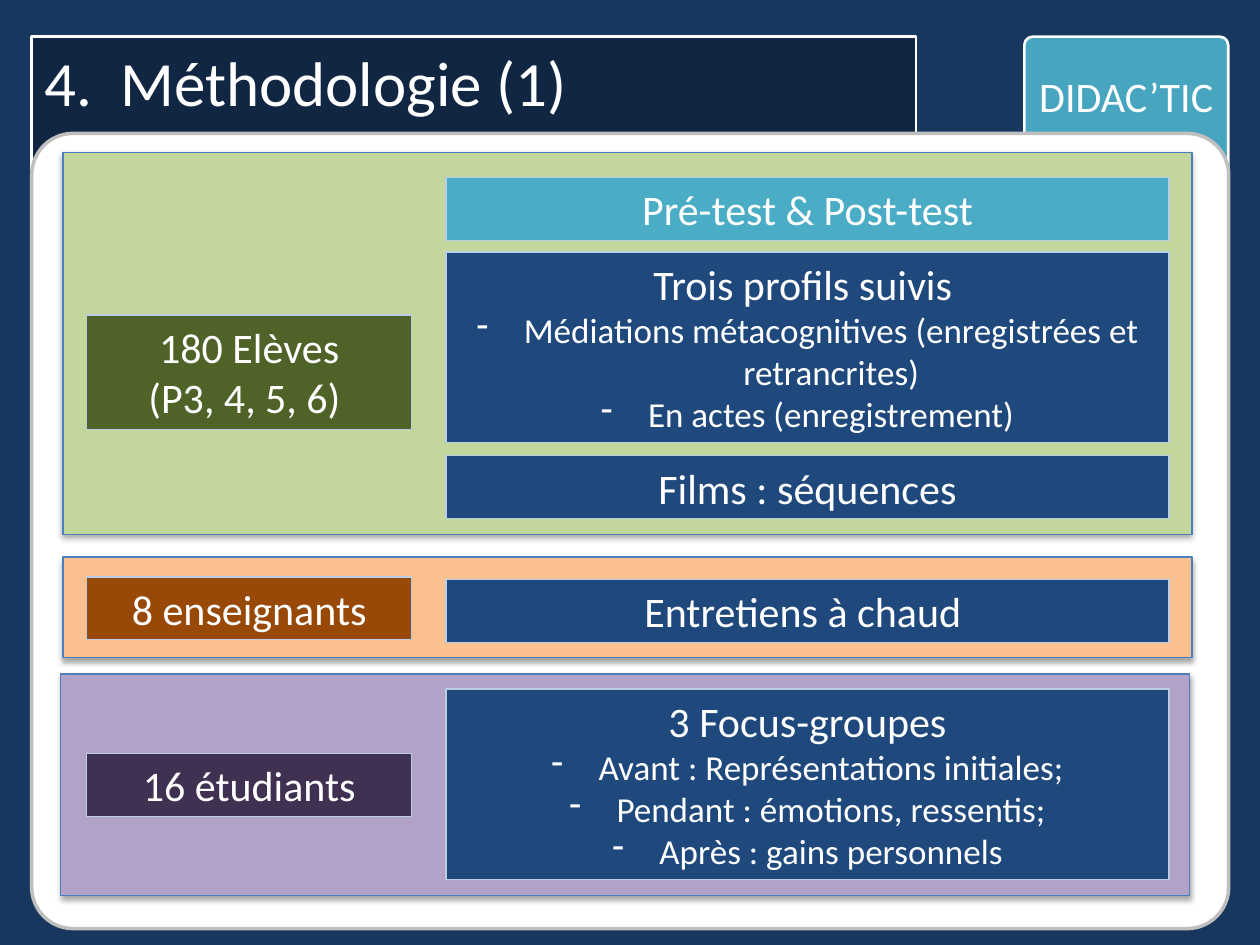
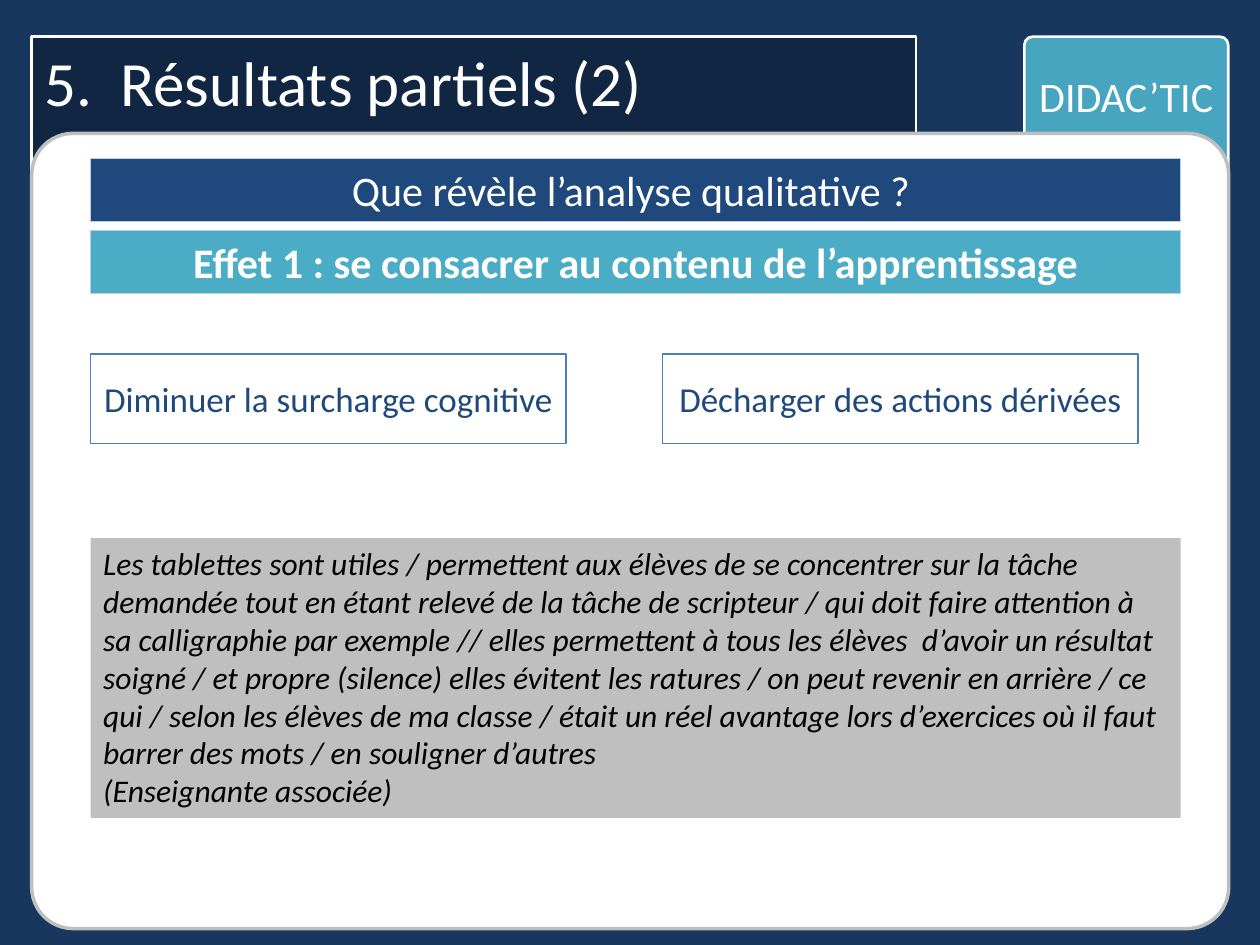
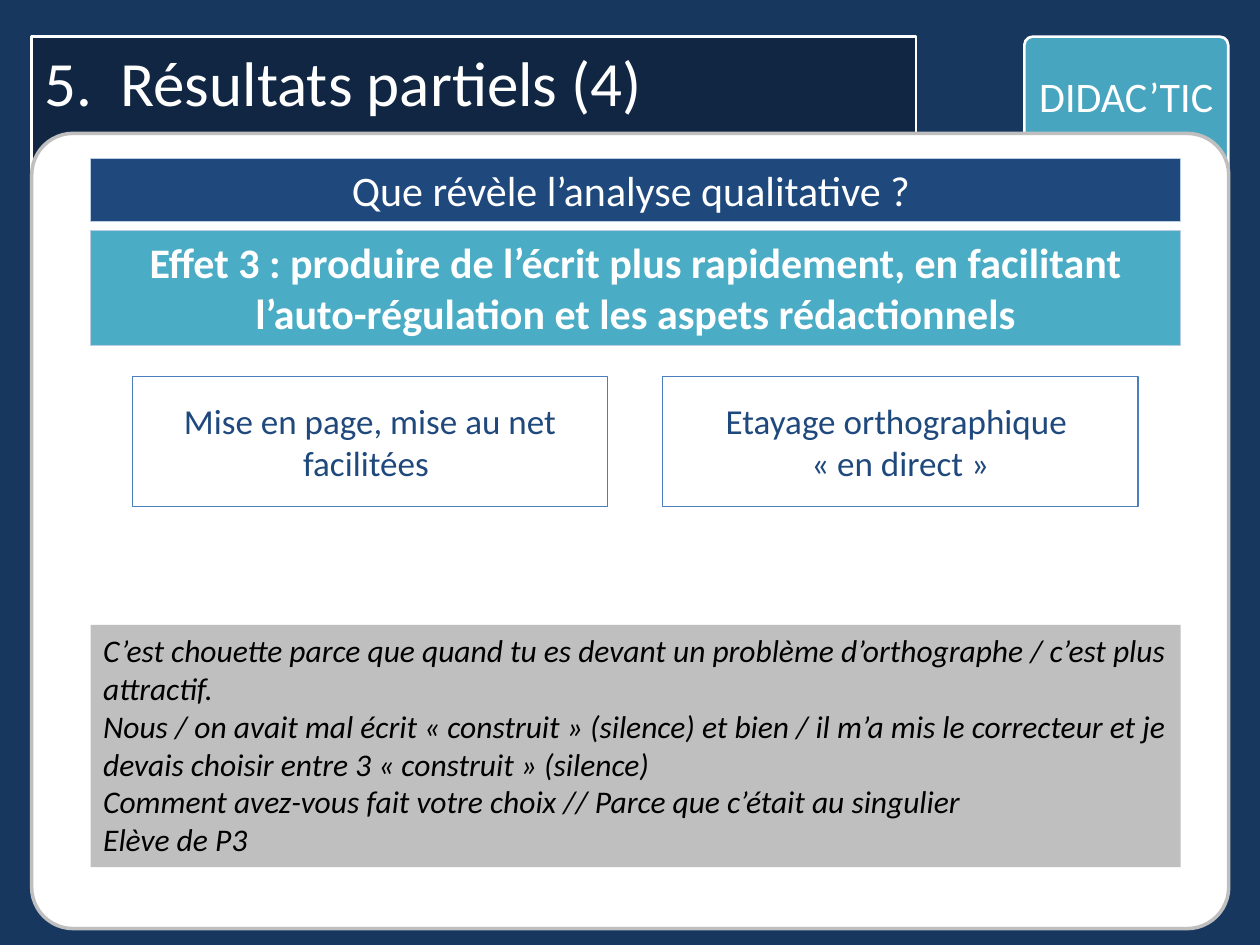
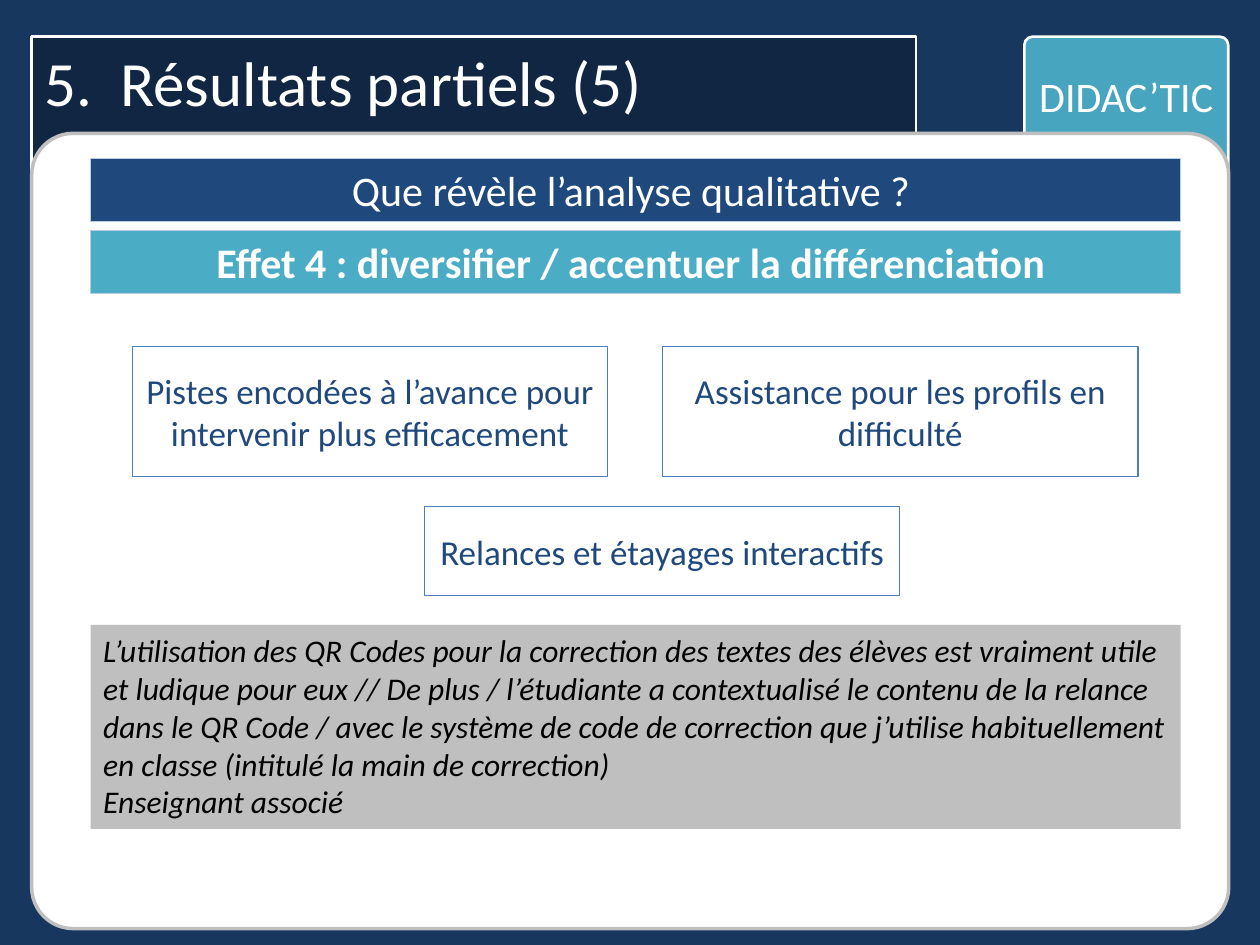
from dataclasses import dataclass
from typing import Optional

from lxml import etree
from pptx import Presentation
from pptx.dml.color import RGBColor
from pptx.enum.shapes import MSO_SHAPE
from pptx.enum.text import MSO_ANCHOR, MSO_AUTO_SIZE, PP_ALIGN
from pptx.oxml.ns import qn
from pptx.util import Cm, Pt

RECT, ROUNDED = MSO_SHAPE.RECTANGLE, MSO_SHAPE.ROUNDED_RECTANGLE
LEFT, CENTER = PP_ALIGN.LEFT, PP_ALIGN.CENTER
TOP, MIDDLE = MSO_ANCHOR.TOP, MSO_ANCHOR.MIDDLE
NO_FIT, GROW = MSO_AUTO_SIZE.NONE, MSO_AUTO_SIZE.SHAPE_TO_FIT_TEXT

FONT = "Calibri"
WHITE = RGBColor(0xFF, 0xFF, 0xFF)
BLACK = RGBColor(0x00, 0x00, 0x00)
BACKDROP = RGBColor(0x17, 0x37, 0x5E)
NIGHT = RGBColor(0x0F, 0x24, 0x3E)
TEAL = RGBColor(0x4B, 0xAC, 0xC6)
NAVY = RGBColor(0x1F, 0x49, 0x7D)
GREY = RGBColor(0xBF, 0xBF, 0xBF)
PALE_BLUE = RGBColor(0xB9, 0xCD, 0xE5)
EDGE_BLUE = RGBColor(0x4B, 0x7E, 0xBC)
LIGHT_GREEN = RGBColor(0xC3, 0xD6, 0x9B)
DARK_GREEN = RGBColor(0x4F, 0x62, 0x28)
LIGHT_ORANGE = RGBColor(0xFA, 0xC0, 0x90)
BROWN = RGBColor(0x98, 0x48, 0x07)
LIGHT_PURPLE = RGBColor(0xB3, 0xA2, 0xC7)
DARK_PURPLE = RGBColor(0x40, 0x31, 0x52)

ONE_LINE, TWO_LINES = 1.27, 2.31  # heights in cm of 24 pt boxes
TAB_RADIUS, PANEL_RADIUS = 0.041, 0.052


@dataclass(frozen=True)
class Area:
    """Place and size in centimetres."""
    left: float
    top: float
    width: float
    height: float

    def lengths(self) -> tuple:
        return Cm(self.left), Cm(self.top), Cm(self.width), Cm(self.height)


@dataclass(frozen=True)
class Style:
    fill: Optional[RGBColor] = None
    line: Optional[RGBColor] = None
    line_width: float = 0.75
    size: int = 24
    color: RGBColor = WHITE
    bold: bool = False
    italic: bool = False
    align: PP_ALIGN = CENTER
    anchor: MSO_ANCHOR = TOP
    fit: MSO_AUTO_SIZE = GROW


@dataclass(frozen=True)
class Activity:
    top: float
    height: float
    text: str
    points: tuple = ()
    fill: RGBColor = NAVY


@dataclass(frozen=True)
class Audience:
    band: Area
    band_fill: RGBColor
    label_top: float
    label_height: float
    label: str
    label_fill: RGBColor
    activities: tuple


@dataclass(frozen=True)
class Idea:
    left: float
    text: str
    top: float
    height: float


@dataclass(frozen=True)
class Effect:
    title: str
    heading: str
    heading_height: float
    ideas: tuple
    quote_top: float
    quote_height: float
    quote: str


TITLE_AREA = Area(0.64, 0.74, 17.83, 16.74)
BADGE_AREA = Area(20.65, 0.74, 4.11, 16.61)
PANEL_AREA = Area(0.64, 2.69, 24.13, 16.03)
TITLE_STYLE = Style(NIGHT, WHITE, 1.5, size=36, align=LEFT, fit=NO_FIT)
BADGE_STYLE = Style(TEAL, WHITE, 1.5, fit=NO_FIT)
PANEL_STYLE = Style(WHITE, GREY, 2)
QUESTION_STYLE = Style(NAVY, PALE_BLUE)
EFFECT_STYLE = Style(TEAL, PALE_BLUE, bold=True)
IDEA_STYLE = Style(line=EDGE_BLUE, size=20, color=NAVY, anchor=MIDDLE, fit=NO_FIT)
QUOTE_STYLE = Style(GREY, size=18, color=BLACK, italic=True, align=LEFT)

BAND_LEFT, BAND_WIDTH = 1.27, 22.76
LABEL_LEFT, LABEL_WIDTH = 1.75, 6.55
ACTIVITY_LEFT, ACTIVITY_WIDTH = 8.99, 14.58
TEXT_LEFT, TEXT_WIDTH = 1.83, 21.97
IDEA_WIDTH = 9.58

AUDIENCES = (
    Audience(
        Area(BAND_LEFT, 3.07, BAND_WIDTH, 7.7), LIGHT_GREEN,
        6.35, TWO_LINES, "180 Elèves\n(P3, 4, 5, 6) ", DARK_GREEN,
        (Activity(3.58, ONE_LINE, "Pré-test & Post-test", fill=TEAL),
         Activity(5.08, 3.84, "Trois profils suivis ",
                  ("Médiations métacognitives (enregistrées et retrancrites)",
                   "En actes (enregistrement)")),
         Activity(9.19, ONE_LINE, "Films : séquences"))),
    Audience(
        Area(BAND_LEFT, 11.23, BAND_WIDTH, 2.03), LIGHT_ORANGE,
        11.63, ONE_LINE, "8 enseignants", BROWN,
        (Activity(11.68, ONE_LINE, "Entretiens à chaud "),)),
    Audience(
        Area(1.22, 13.59, BAND_WIDTH, 4.47), LIGHT_PURPLE,
        15.19, ONE_LINE, "16 étudiants", DARK_PURPLE,
        (Activity(13.89, 3.84, "3 Focus-groupes",
                  ("Avant : Représentations initiales;",
                   "Pendant : émotions, ressentis;",
                   "Après : gains personnels")),)),
)

EFFECTS = (
    Effect(
        "5.  Résultats partiels (2)",
        "Effet 1 : se consacrer au contenu de l’apprentissage", ONE_LINE,
        (Idea(1.83, "Diminuer la surcharge cognitive", 7.14, 1.8),
         Idea(13.36, "Décharger des actions dérivées", 7.14, 1.8)),
        10.85, 5.64,
        "Les tablettes sont utiles / permettent aux élèves de se concentrer sur la "
        "tâche demandée tout en étant relevé de la tâche de scripteur / qui doit "
        "faire attention à sa calligraphie par exemple // elles permettent à tous "
        "les élèves  d’avoir un résultat soigné / et propre (silence) elles évitent "
        "les ratures / on peut revenir en arrière / ce qui / selon les élèves de ma "
        "classe / était un réel avantage lors d’exercices où il faut barrer des "
        "mots / en souligner d’autres\n"
        "(Enseignante associée)"),
    Effect(
        "5.  Résultats partiels (4)",
        "Effet 3 : produire de l’écrit plus rapidement, en facilitant "
        "l’auto-régulation et les aspets rédactionnels", TWO_LINES,
        (Idea(2.67, "Mise en page, mise au net facilitées ", 7.59, 2.62),
         Idea(13.36, "Etayage orthographique \n« en direct »", 7.59, 2.62)),
        12.6, 4.88,
        "C’est chouette parce que quand tu es devant un problème d’orthographe / "
        "c’est plus attractif.\n"
        "Nous / on avait mal écrit « construit » (silence) et bien / il m’a mis le "
        "correcteur et je devais choisir entre 3 « construit » (silence)\n"
        "Comment avez-vous fait votre choix // Parce que c’était au singulier\n"
        "Elève de P3"),
    Effect(
        "5.  Résultats partiels (5)",
        "Effet 4 : diversifier / accentuer la différenciation ", ONE_LINE,
        (Idea(2.67, "Pistes encodées à l’avance pour intervenir plus efficacement",
              6.99, 2.62),
         Idea(13.36, "Assistance pour les profils en difficulté", 6.99, 2.62),
         Idea(8.56, "Relances et étayages interactifs", 10.21, 1.8)),
        12.6, 4.11,
        "L’utilisation des QR Codes pour la correction des textes des élèves est "
        "vraiment utile et ludique pour eux // De plus / l’étudiante a contextualisé "
        "le contenu de la relance dans le QR Code / avec le système de code de "
        "correction que j’utilise habituellement en classe (intitulé la main de "
        "correction)\n"
        "Enseignant associé"),
)


# Formatting helpers
def paint(shape, style: Style) -> None:
    if style.fill is None:
        shape.fill.background()
    else:
        shape.fill.solid()
        shape.fill.fore_color.rgb = style.fill
    if style.line is None:
        shape.line.fill.background()
    else:
        shape.line.color.rgb = style.line
        shape.line.width = Pt(style.line_width)


def write(shape, text: str, style: Style) -> None:
    frame = shape.text_frame
    frame.text = text
    frame.word_wrap = True
    frame.auto_size = style.fit
    frame.vertical_anchor = style.anchor
    for paragraph in frame.paragraphs:
        paragraph.alignment = style.align
        for run in paragraph.runs:
            run.font.name = FONT
            run.font.size = Pt(style.size)
            run.font.color.rgb = style.color
            run.font.bold = style.bold
            run.font.italic = style.italic


def set_opacity(shape, percent: int) -> None:
    color = shape._element.spPr.find(qn("a:solidFill")).find(qn("a:srgbClr"))
    etree.SubElement(color, qn("a:alpha"), val=str(percent * 1000))


def drop_shadow(shape) -> None:
    effects = shape._element.spPr.find(qn("a:effectLst"))
    shadow = etree.SubElement(
        effects, qn("a:outerShdw"), blurRad=str(Pt(3.1)), dist=str(Pt(1.8)),
        dir="5400000", rotWithShape="0")
    color = etree.SubElement(shadow, qn("a:srgbClr"), val="000000")
    etree.SubElement(color, qn("a:alpha"), val="35000")


def add_dash(paragraph) -> None:
    properties = paragraph._p.get_or_add_pPr()
    properties.set("marL", str(Cm(0.95)))
    properties.set("indent", str(Cm(-0.95)))
    etree.SubElement(properties, qn("a:buChar"), char="-")


def add_box(slide, area: Area, style: Style, text: str = "", kind=RECT,
            radius: Optional[float] = None):
    box = slide.shapes.add_shape(kind, *area.lengths())
    box.shadow.inherit = False
    if radius is not None:
        box.adjustments[0] = radius
    paint(box, style)
    if text:
        write(box, text, style)
    return box


# Shared frame: title tab, project badge and white panel
def shape_title(title, text: str) -> None:
    title.left, title.top, title.width, title.height = TITLE_AREA.lengths()
    outline = etree.Element(qn("a:prstGeom"), prst="roundRect")
    guides = etree.SubElement(outline, qn("a:avLst"))
    etree.SubElement(guides, qn("a:gd"), name="adj",
                     fmla=f"val {round(TAB_RADIUS * 100000)}")
    title._element.spPr.find(qn("a:xfrm")).addnext(outline)
    paint(title, TITLE_STYLE)
    set_opacity(title, 85)
    write(title, text, TITLE_STYLE)


def add_framed_slide(deck, title: str):
    slide = deck.slides.add_slide(deck.slide_layouts[5])
    shape_title(slide.shapes.title, title)
    badge = add_box(slide, BADGE_AREA, BADGE_STYLE, "DIDAC’TIC", ROUNDED, TAB_RADIUS)
    badge.text_frame.margin_top = Cm(0.64)
    set_opacity(badge, 94)
    add_box(slide, PANEL_AREA, PANEL_STYLE, kind=ROUNDED, radius=PANEL_RADIUS)
    return slide


# Method slide
def add_activity(slide, activity: Activity) -> None:
    area = Area(ACTIVITY_LEFT, activity.top, ACTIVITY_WIDTH, activity.height)
    text = "\n".join((activity.text, *activity.points))
    box = add_box(slide, area, Style(activity.fill, PALE_BLUE), text)
    for point in box.text_frame.paragraphs[1:]:
        add_dash(point)
        for run in point.runs:
            run.font.size = Pt(20)


def add_audience(slide, audience: Audience) -> None:
    drop_shadow(add_box(slide, audience.band, Style(audience.band_fill, EDGE_BLUE)))
    label_area = Area(LABEL_LEFT, audience.label_top, LABEL_WIDTH, audience.label_height)
    add_box(slide, label_area, Style(audience.label_fill, PALE_BLUE), audience.label)
    for activity in audience.activities:
        add_activity(slide, activity)


# Result slides
def add_effect_slide(deck, effect: Effect) -> None:
    slide = add_framed_slide(deck, effect.title)
    add_box(slide, Area(TEXT_LEFT, 3.2, TEXT_WIDTH, ONE_LINE), QUESTION_STYLE,
            "Que révèle l’analyse qualitative ? ")
    add_box(slide, Area(TEXT_LEFT, 4.65, TEXT_WIDTH, effect.heading_height),
            EFFECT_STYLE, effect.heading)
    for idea in effect.ideas:
        add_box(slide, Area(idea.left, idea.top, IDEA_WIDTH, idea.height),
                IDEA_STYLE, idea.text)
    add_box(slide, Area(TEXT_LEFT, effect.quote_top, TEXT_WIDTH, effect.quote_height),
            QUOTE_STYLE, effect.quote)


def main() -> None:
    deck = Presentation()
    deck.slide_width, deck.slide_height = Cm(25.4), Cm(19.05)
    backdrop = deck.slide_master.background.fill
    backdrop.solid()
    backdrop.fore_color.rgb = BACKDROP

    method = add_framed_slide(deck, "4.  Méthodologie (1)")
    for audience in AUDIENCES:
        add_audience(method, audience)
    for effect in EFFECTS:
        add_effect_slide(deck, effect)
    deck.save("out.pptx")


if __name__ == "__main__":
    main()
